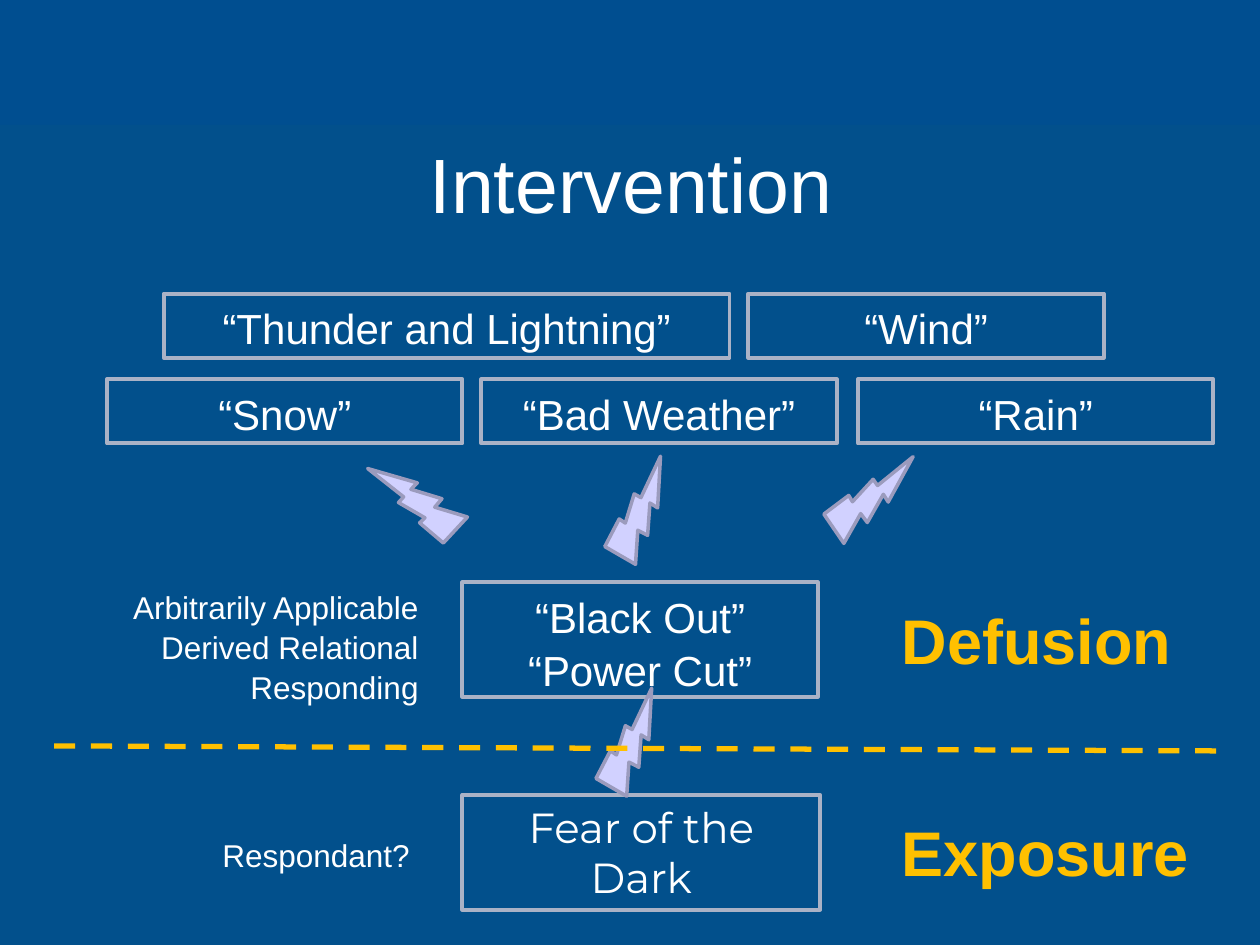
from pptx import Presentation
from pptx.dml.color import RGBColor
from pptx.enum.dml import MSO_LINE
from pptx.enum.shapes import MSO_CONNECTOR, MSO_SHAPE
from pptx.enum.text import MSO_ANCHOR, PP_ALIGN
from pptx.oxml.ns import qn
from pptx.util import Inches, Pt
from lxml import etree


def rgb(value):
    return RGBColor.from_string(value)


def write(sp, text, size, align, color="FFFFFF", bold=False, font="Arial"):
    tf = sp.text_frame
    tf.word_wrap = True
    tf.vertical_anchor = MSO_ANCHOR.TOP
    for i, line in enumerate(text.split("\n")):
        p = tf.paragraphs[0] if i == 0 else tf.add_paragraph()
        p.text = line
        p.alignment = align
        if font == "Arial":
            p.line_spacing = 1.06
        p.font.name = font
        p.font.size = Pt(size)
        p.font.bold = bold
        p.font.color.rgb = rgb(color)


prs = Presentation()
prs.slide_width, prs.slide_height = Inches(10), Inches(7.5)
s = prs.slides.add_slide(prs.slide_layouts[6])
s.background.fill.solid()
s.background.fill.fore_color.rgb = rgb("004E90")

panel = s.shapes.add_shape(MSO_SHAPE.RECTANGLE, 0, Inches(0.99), Inches(10), Inches(6.51))
panel.shadow.inherit = False
panel.fill.solid()
panel.fill.fore_color.rgb = rgb("02508C")
panel.line.fill.background()

boxes = [
    ("Fear of the Dark", 3.67, 6.31, 2.84, 0.91, "Montserrat"),
    ("“Black Out”\n“Power Cut”", 3.67, 4.62, 2.82, 0.91, "Arial"),
    ("“Snow”", 0.85, 3.01, 2.82, 0.51, "Arial"),
    ("“Bad Weather”", 3.82, 3.01, 2.82, 0.51, "Arial"),
    ("“Rain”", 6.81, 3.01, 2.82, 0.51, "Arial"),
    ("“Thunder and Lightning”", 1.3, 2.33, 4.49, 0.51, "Arial"),
    ("“Wind”", 5.94, 2.33, 2.82, 0.51, "Arial"),
]
for text, x, y, w, h, font in boxes:
    sp = s.shapes.add_shape(MSO_SHAPE.RECTANGLE, Inches(x), Inches(y), Inches(w), Inches(h))
    sp.shadow.inherit = False
    sp.fill.background()
    sp.line.color.rgb = rgb("AAB2C6")
    sp.line.width = Pt(2.25)
    write(sp, text, 24, PP_ALIGN.CENTER, font=font)

bolts = [(4.7, 5.55, 238.7), (3.02, 3.6, 161.6), (6.59, 3.6, 264.3), (4.77, 3.71, 238.7)]
for x, y, angle in bolts:
    sp = s.shapes.add_shape(MSO_SHAPE.LIGHTNING_BOLT, Inches(x), Inches(y), Inches(0.63), Inches(0.75))
    sp.shadow.inherit = False
    sp.rotation = angle
    sp.fill.solid()
    sp.fill.fore_color.rgb = rgb("D1D1FF")
    sp.line.color.rgb = rgb("9B9BBD")
    sp.line.width = Pt(2)

divider = s.shapes.add_connector(
    MSO_CONNECTOR.STRAIGHT, Inches(0.43), Inches(5.92), Inches(9.73), Inches(5.96))
divider.line.color.rgb = rgb("FFC000")
divider.line.width = Pt(3)
divider.line.dash_style = MSO_LINE.DASH
etree.SubElement(divider._element.spPr, qn("a:effectLst"))

labels = [
    ("Intervention", 0.51, 0.99, 9, 1.25, 44, PP_ALIGN.CENTER, "FFFFFF", False),
    ("Arbitrarily Applicable Derived Relational Responding",
     0.27, 4.6, 3.15, 1.01, 18, PP_ALIGN.RIGHT, "FFFFFF", False),
    ("Respondant? ", 0.43, 6.57, 2.99, 0.4, 18, PP_ALIGN.RIGHT, "FFFFFF", False),
    ("Exposure", 7.06, 6.37, 2.9, 0.71, 36, PP_ALIGN.LEFT, "FFC000", True),
    ("Defusion", 7.06, 4.69, 2.9, 0.71, 36, PP_ALIGN.LEFT, "FFC000", True),
]
for text, x, y, w, h, size, align, color, bold in labels:
    sp = s.shapes.add_textbox(Inches(x), Inches(y), Inches(w), Inches(h))
    write(sp, text, size, align, color, bold)

prs.save("out.pptx")
